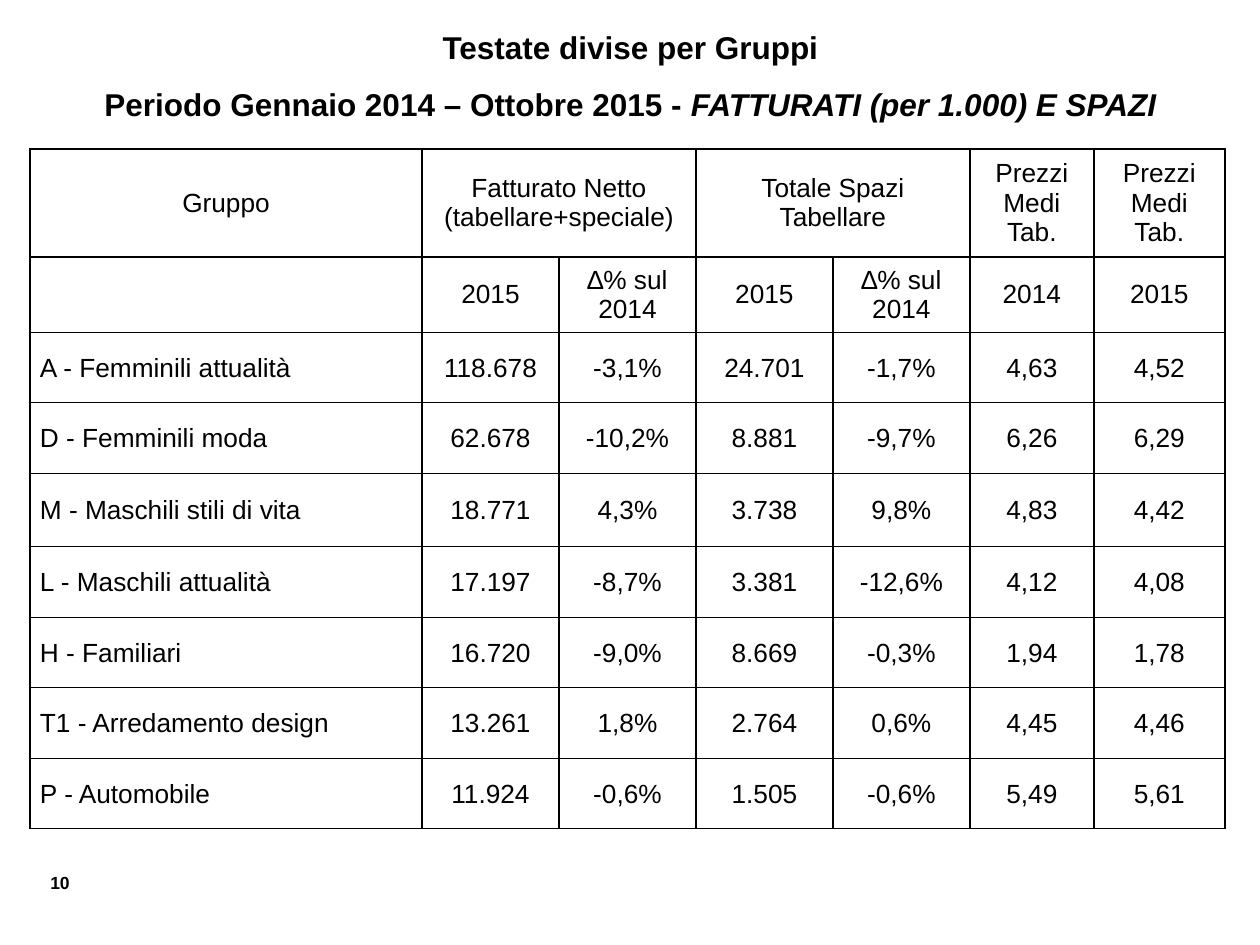
import pptx
import pptx.util
import pptx.dml.color
import pptx.enum.text
import pptx.oxml

PX = 914400 // 126
COLORS = {"text": "000000", "border": "000000"}
ALIGN = pptx.enum.text.PP_ALIGN
MIDDLE = pptx.enum.text.MSO_ANCHOR.MIDDLE


def write(paragraph, text, size=15, bold=False, italic=False, align=ALIGN.CENTER):
    paragraph.alignment = align
    run = paragraph.add_run()
    run.text = text
    run.font.name = "Arial"
    run.font.size = pptx.util.Pt(size)
    run.font.bold = bold
    run.font.italic = italic
    run.font.color.rgb = pptx.dml.color.RGBColor.from_string(COLORS["text"])


def add_borders(cell, width=1):
    properties = cell._tc.get_or_add_tcPr()
    for position, side in enumerate(("lnL", "lnR", "lnT", "lnB")):
        line = pptx.oxml.parse_xml(
            f'<a:{side} xmlns:a="http://schemas.openxmlformats.org/drawingml/2006/main"'
            f' w="{pptx.util.Pt(width)}"><a:solidFill><a:srgbClr val="{COLORS["border"]}"/>'
            f'</a:solidFill></a:{side}>')
        properties.insert(position, line)


deck = pptx.Presentation()
deck.slide_width, deck.slide_height = 1260 * PX, 945 * PX
slide = deck.slides.add_slide(deck.slide_layouts[6])

# Title
title = slide.shapes.add_textbox(25 * PX, 3 * PX, 1211 * PX, 135 * PX).text_frame
title.word_wrap = True
heading = title.paragraphs[0]
period = title.add_paragraph()
heading.line_spacing = period.line_spacing = 1.5
write(heading, "Testate divise per Gruppi", size=18, bold=True)
write(period, "Periodo Gennaio 2014 – Ottobre 2015 - ", size=18, bold=True)
write(period, "FATTURATI (per 1.000) E SPAZI", size=18, bold=True, italic=True)

# Table of groups
HEADER_ROWS = 2
rows = [
    ("Gruppo", "Fatturato Netto (tabellare+speciale)", "", "Totale Spazi Tabellare", "",
     "Prezzi Medi Tab.", "Prezzi Medi Tab."),
    ("", "2015", "∆% sul 2014", "2015", "∆% sul 2014", "2014", "2015"),
    ("A - Femminili attualità", "118.678", "-3,1%", "24.701", "-1,7%", "4,63", "4,52"),
    ("D - Femminili moda", "62.678", "-10,2%", "8.881", "-9,7%", "6,26", "6,29"),
    ("M - Maschili stili di vita", "18.771", "4,3%", "3.738", "9,8%", "4,83", "4,42"),
    ("L - Maschili attualità", "17.197", "-8,7%", "3.381", "-12,6%", "4,12", "4,08"),
    ("H - Familiari", "16.720", "-9,0%", "8.669", "-0,3%", "1,94", "1,78"),
    ("T1 - Arredamento design", "13.261", "1,8%", "2.764", "0,6%", "4,45", "4,46"),
    ("P - Automobile", "11.924", "-0,6%", "1.505", "-0,6%", "5,49", "5,61"),
]
widths = [392, 137, 137, 137, 137, 124, 131]
heights = [108, 75, 70, 71, 73, 71, 70, 71, 70]
groups = slide.shapes.add_table(len(rows), len(widths), 30 * PX, 149 * PX,
                                sum(widths) * PX, sum(heights) * PX).table
groups.first_row = groups.horz_banding = False
for column, width in zip(groups.columns, widths):
    column.width = width * PX
for row, height in zip(groups.rows, heights):
    row.height = height * PX

for r, values in enumerate(rows):
    for c, value in enumerate(values):
        cell = groups.cell(r, c)
        cell.vertical_anchor = MIDDLE
        cell.fill.background()
        add_borders(cell)
        if r >= HEADER_ROWS:
            cell.margin_left = (10 if c == 0 else 1) * PX
            cell.margin_right = cell.margin_top = PX
            cell.margin_bottom = 0
        if value:
            is_group = r >= HEADER_ROWS and c == 0
            write(cell.text_frame.paragraphs[0], value,
                  align=ALIGN.LEFT if is_group else ALIGN.CENTER)

# Headings over two columns
for c in (1, 3):
    groups.cell(0, c).merge(groups.cell(0, c + 1))

# Page number
page = slide.shapes.add_textbox(24 * PX, 866 * PX, 58 * PX, 34 * PX).text_frame
page.word_wrap = True
write(page.paragraphs[0], "10", size=10, bold=True, align=ALIGN.RIGHT)

deck.save("out.pptx")
